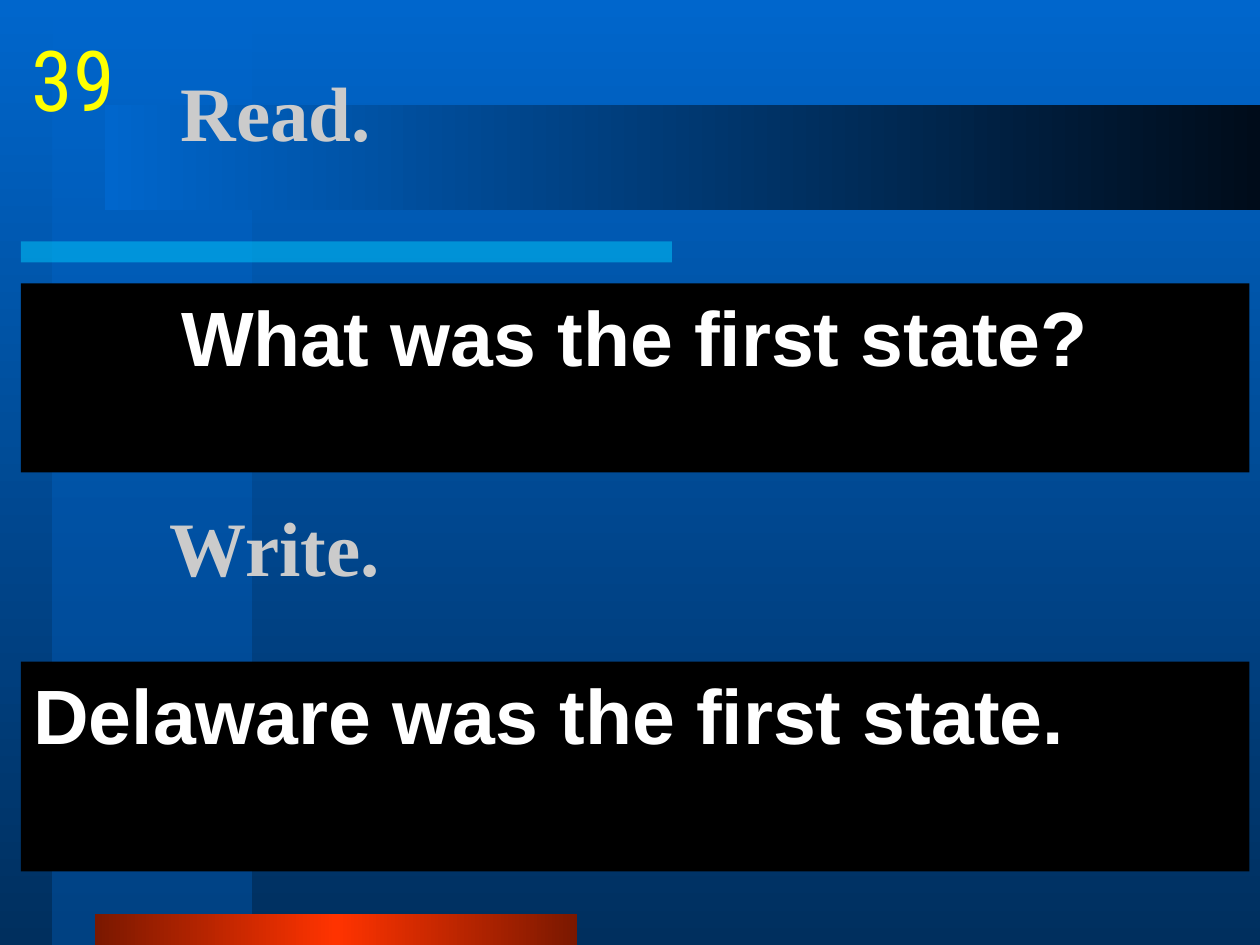
import dataclasses

import pptx
import pptx.dml.color
import pptx.enum.shapes
import pptx.enum.text
import pptx.oxml
import pptx.oxml.ns
import pptx.util

Pt = pptx.util.Pt
ALIGN = pptx.enum.text.PP_ALIGN
ANCHOR = pptx.enum.text.MSO_ANCHOR


@dataclasses.dataclass(frozen=True)
class Theme:
    blue: str = "0066CC"
    deep_blue: str = "002F5E"
    column_blue: str = "0053A6"
    night: str = "000C1A"
    cyan: str = "00CCFF"
    red: str = "FF3300"
    dark_red: str = "7A1800"
    panel: str = "000000"
    panel_text: str = "FFFFFF"
    cue_text: str = "CBCBCB"
    number_text: str = "FFFF00"
    cue_font: str = "Times New Roman"
    panel_font: str = "Arial"
    number_font: str = "Roboto Condensed"
    text_size: int = 44
    number_size: int = 48


class CardBuilder:
    def __init__(self, slide, theme):
        self.slide = slide
        self.theme = theme

    def gradient(self, fill, owner, colors, angle, alpha=100):
        """Spread colors evenly over the fill that lies in the owner element."""
        fill.gradient()
        fill.gradient_angle = angle
        stops = owner.find(".//" + pptx.oxml.ns.qn("a:gsLst"))
        for stop in list(stops):
            stops.remove(stop)
        for index, color in enumerate(colors):
            position = index * 100000 // (len(colors) - 1)
            stops.append(pptx.oxml.parse_xml(
                f'<a:gs {pptx.oxml.ns.nsdecls("a")} pos="{position}">'
                f'<a:srgbClr val="{color}"><a:alpha val="{alpha * 1000}"/>'
                f'</a:srgbClr></a:gs>'))

    def background(self, colors):
        self.gradient(self.slide.background.fill, self.slide.element, colors, 270)

    def bar(self, bounds, colors, angle=0, alpha=100):
        shape = self.slide.shapes.add_shape(
            pptx.enum.shapes.MSO_SHAPE.RECTANGLE, *map(Pt, bounds))
        shape.shadow.inherit = False
        shape.line.fill.background()
        self.gradient(shape.fill, shape.element, colors, angle, alpha)

    def add_text(self, box, text, font, size, color, bold=True,
                 align=ALIGN.LEFT, anchor=ANCHOR.TOP, wrap=True):
        frame = box.text_frame
        frame.word_wrap = wrap
        frame.auto_size = pptx.enum.text.MSO_AUTO_SIZE.NONE
        frame.vertical_anchor = anchor
        para = frame.paragraphs[0]
        para.alignment = align
        span = para.add_run()
        span.text = text
        span.font.name = font
        span.font.size = Pt(size)
        span.font.bold = bold
        span.font.color.rgb = pptx.dml.color.RGBColor.from_string(color)
        return para

    def text_box(self, bounds):
        return self.slide.shapes.add_textbox(*map(Pt, bounds))

    def cue(self, box, text):
        self.add_text(box, text, self.theme.cue_font, self.theme.text_size,
                      self.theme.cue_text, anchor=ANCHOR.MIDDLE)

    def title(self, bounds, text):
        box = self.slide.shapes.title
        box.left, box.top, box.width, box.height = map(Pt, bounds)
        # Later shapes are drawn over the title, earlier bars stay below it.
        self.slide.shapes.element.append(box.element)
        self.cue(box, text)

    def panel(self, bounds, text, align):
        box = self.text_box(bounds)
        box.fill.solid()
        box.fill.fore_color.rgb = pptx.dml.color.RGBColor.from_string(self.theme.panel)
        para = self.add_text(box, text, self.theme.panel_font, self.theme.text_size,
                             self.theme.panel_text, align=align)
        para.space_before = Pt(9)
        properties = para._p.get_or_add_pPr()
        properties.set("marL", str(Pt(27)))
        properties.set("indent", str(Pt(-27)))

    def number(self, bounds, text):
        self.add_text(self.text_box(bounds), text, self.theme.number_font,
                      self.theme.number_size, self.theme.number_text, bold=False,
                      align=ALIGN.CENTER, wrap=False)


def main():
    deck = pptx.Presentation()
    deck.slide_width, deck.slide_height = Pt(720), Pt(540)
    theme = Theme()
    card = CardBuilder(deck.slides.add_slide(deck.slide_layouts[5]), theme)

    card.background([theme.blue, theme.deep_blue])
    card.bar((30, 0, 114, 540), [theme.blue, theme.column_blue], angle=270, alpha=50)
    card.bar((12, 138, 372, 12), [theme.cyan, theme.cyan], alpha=50)
    card.bar((54, 522, 276, 18), [theme.dark_red, theme.red, theme.dark_red])
    card.bar((60, 60, 660, 60), [theme.blue, theme.night])

    card.title((96, 18, 612, 90), "Read.")
    card.panel((12, 162, 702, 108), "What was the first state?", ALIGN.CENTER)
    card.cue(card.text_box((90, 252, 612, 120)), "Write.")
    card.panel((12, 378, 702, 120), "Delaware was the first state.", ALIGN.LEFT)
    card.number((12, 12, 60, 60), "39")

    deck.save("out.pptx")


if __name__ == "__main__":
    main()
